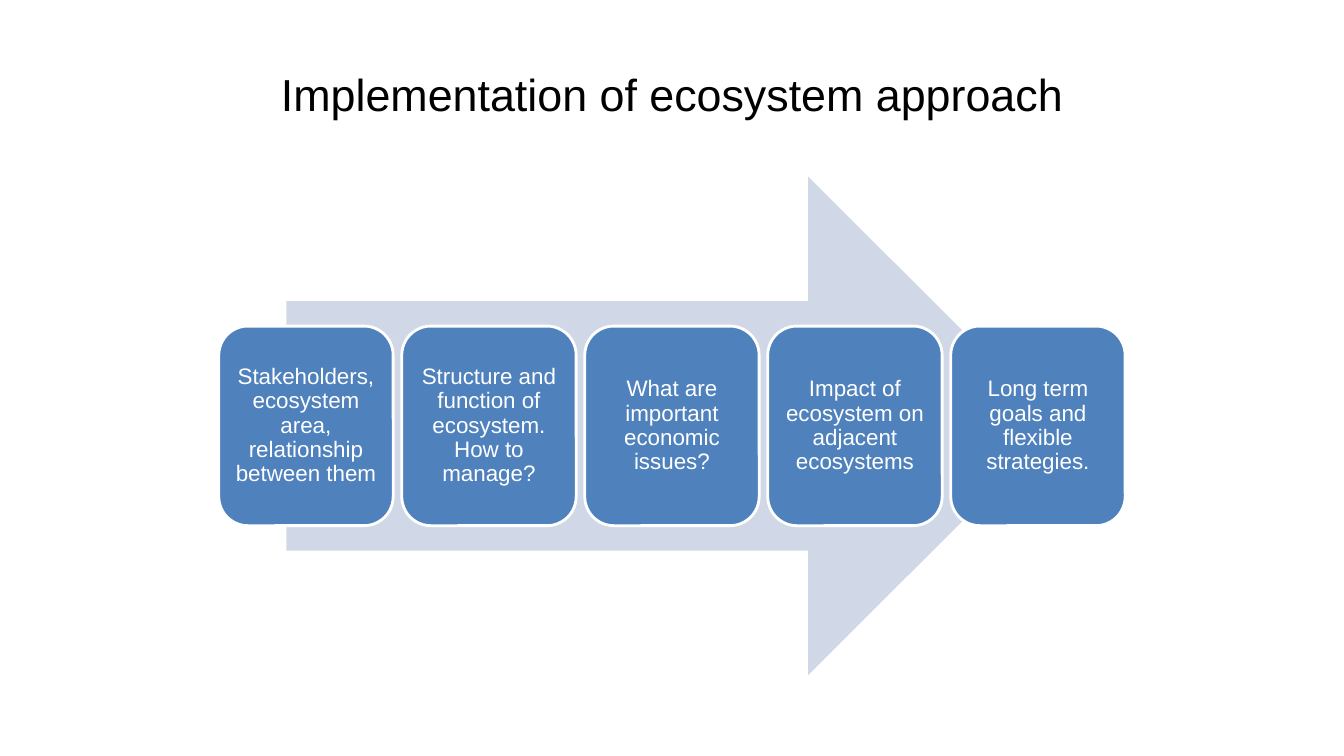
from pptx import Presentation
from pptx.dml.color import RGBColor
from pptx.enum.shapes import MSO_SHAPE
from pptx.enum.text import MSO_ANCHOR, MSO_AUTO_SIZE, PP_ALIGN
from pptx.util import Inches, Pt

TITLE = "Implementation of ecosystem approach"
STEPS = [
    "Stakeholders, ecosystem area, relationship between them",
    "Structure and function of ecosystem. How to manage?",
    "What are important economic issues?",
    "Impact of ecosystem on adjacent ecosystems",
    "Long term goals and flexible strategies.",
]

ARROW_LEFT, ARROW_TOP, ARROW_WIDTH, ARROW_HEIGHT = 2.84, 1.75, 7.65, 4.95
STEP_LEFT, STEP_WIDTH, STEP_HEIGHT = 2.17, 1.73, 1.98
STEP_PITCH = 1.815
STEP_TOP = ARROW_TOP + (ARROW_HEIGHT - STEP_HEIGHT) / 2


def color(value):
    return RGBColor.from_string(value)


def write_text(shape, text, size, text_color):
    frame = shape.text_frame
    frame.word_wrap = True
    frame.auto_size = MSO_AUTO_SIZE.NONE
    frame.vertical_anchor = MSO_ANCHOR.MIDDLE
    paragraph = frame.paragraphs[0]
    paragraph.alignment = PP_ALIGN.CENTER
    run = paragraph.add_run()
    run.text = text
    run.font.name = "Arial"
    run.font.size = Pt(size)
    run.font.color.rgb = color(text_color)
    return frame


def add_filled_shape(slide, kind, left, top, width, height, fill):
    shape = slide.shapes.add_shape(
        kind, Inches(left), Inches(top), Inches(width), Inches(height)
    )
    shape.shadow.inherit = False
    shape.fill.solid()
    shape.fill.fore_color.rgb = color(fill)
    return shape


def add_step(slide, index, text):
    left = STEP_LEFT + index * STEP_PITCH
    step = add_filled_shape(
        slide, MSO_SHAPE.ROUNDED_RECTANGLE, left, STEP_TOP, STEP_WIDTH, STEP_HEIGHT, "4F81BD"
    )
    step.line.color.rgb = color("FFFFFF")
    step.line.width = Pt(2)
    frame = write_text(step, text, 16, "FFFFFF")
    frame.margin_left = frame.margin_right = Inches(0.07)
    frame.margin_top = frame.margin_bottom = Inches(0.07)
    frame.paragraphs[0].line_spacing = 0.9


def main():
    presentation = Presentation()
    presentation.slide_width = Inches(13.33)
    presentation.slide_height = Inches(7.5)
    slide = presentation.slides.add_slide(presentation.slide_layouts[5])

    title = slide.shapes.title
    title.left, title.top = Inches(0.67), Inches(0.3)
    title.width, title.height = Inches(12), Inches(1.25)
    write_text(title, TITLE, 32, "000000")

    arrow = add_filled_shape(
        slide, MSO_SHAPE.RIGHT_ARROW, ARROW_LEFT, ARROW_TOP, ARROW_WIDTH, ARROW_HEIGHT, "D0D8E8"
    )
    arrow.line.fill.background()

    for index, text in enumerate(STEPS):
        add_step(slide, index, text)

    presentation.save("out.pptx")


if __name__ == "__main__":
    main()
